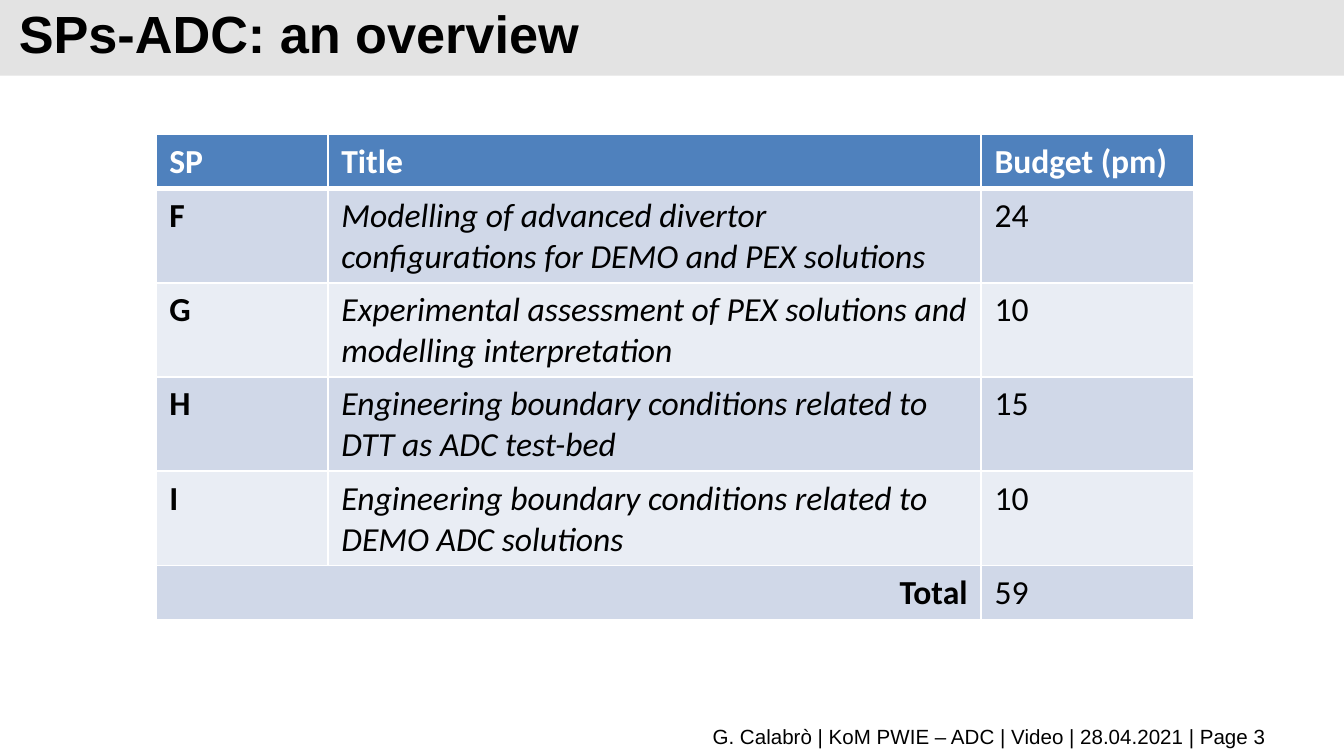
from typing import NamedTuple

from lxml.etree import SubElement
from pptx import Presentation
from pptx.dml.color import RGBColor
from pptx.enum.shapes import MSO_SHAPE as Shape
from pptx.enum.text import MSO_ANCHOR as Anchor, PP_ALIGN as Align
from pptx.oxml.ns import qn
from pptx.util import Pt

BLACK, WHITE, BAND = "000000", "FFFFFF", "E3E3E3"
HEADER, STRIPES = "4F81BD", ("D0D8E8", "E9EDF4")
ROW_HEIGHT = 29.2
COLUMN_WIDTHS = (92.2, 349.9, 113.8)


class Box(NamedTuple):
    left: float
    top: float
    width: float
    height: float

    def points(self) -> list:
        return [Pt(v) for v in self]


class Project(NamedTuple):
    code: str
    title: str
    budget: int


PROJECTS = [
    Project("F", "Modelling of advanced divertor configurations for DEMO and PEX solutions", 24),
    Project("G", "Experimental assessment of PEX solutions and modelling interpretation", 10),
    Project("H", "Engineering boundary conditions related to DTT as ADC test-bed", 15),
    Project("I", "Engineering boundary conditions related to DEMO ADC solutions", 10),
]


def rgb(color: str) -> RGBColor:
    return RGBColor.from_string(color)


def style(p, size: float, font: str, color: str = BLACK, bold=False, italic=False, align=Align.LEFT) -> None:
    p.alignment = align
    p.font.size, p.font.name = Pt(size), font
    p.font.bold, p.font.italic = bold, italic
    p.font.color.rgb = rgb(color)


def set_borders(cell, top: float, bottom: float) -> None:
    tc_pr = cell._tc.get_or_add_tcPr()
    widths = {"a:lnL": 1, "a:lnR": 1, "a:lnT": top, "a:lnB": bottom}
    for i, (tag, width) in enumerate(widths.items()):
        line = SubElement(tc_pr, qn(tag), w=str(Pt(width)))
        fill = SubElement(line, qn("a:solidFill"))
        SubElement(fill, qn("a:srgbClr"), val=WHITE)
        tc_pr.insert(i, line)


def fill_cell(cell, text: str, fill: str, **font) -> None:
    cell.text = text
    cell.fill.solid()
    cell.fill.fore_color.rgb = rgb(fill)
    style(cell.text_frame.paragraphs[0], 18, "Calibri", **font)


def add_title(s, text: str) -> None:
    # Grey band behind the title
    band = s.shapes.add_shape(Shape.RECTANGLE, *Box(0, 0, 720, 40.5).points())
    band.shadow.inherit = False
    band.fill.solid()
    band.fill.fore_color.rgb = rgb(BAND)
    band.line.fill.background()
    title = s.shapes.title
    title._element.addprevious(band._element)

    title.left, title.top, title.width, title.height = Box(2.9, 4.3, 669, 27.4).points()
    tf = title.text_frame
    tf.text, tf.vertical_anchor = text, Anchor.MIDDLE
    p = tf.paragraphs[0]
    p.line_spacing = Pt(32)
    style(p, 28, "Arial", bold=True)


def add_footer(s, text: str) -> None:
    tf = s.shapes.add_textbox(*Box(36.7, 386.6, 648.7, 15.8).points()).text_frame
    tf.word_wrap, tf.vertical_anchor = True, Anchor.MIDDLE
    tf.text = text
    style(tf.paragraphs[0], 11, "Arial", align=Align.RIGHT)


def add_budget_table(s, projects: list[Project]) -> None:
    last = len(projects) + 1
    box = Box(83.5, 72, sum(COLUMN_WIDTHS), 260)
    frame = s.shapes.add_table(last + 1, len(COLUMN_WIDTHS), *box.points())
    table = frame.table
    table.horz_banding = False
    for column, width in zip(table.columns, COLUMN_WIDTHS):
        column.width = Pt(width)
    for row in table.rows:
        row.height = Pt(ROW_HEIGHT)
    frame.height = Pt(box.height)

    # Header row
    for c, text in enumerate(("SP", "Title", "Budget (pm)")):
        fill_cell(table.cell(0, c), text, HEADER, color=WHITE, bold=True)

    # One row per project
    for r, project in enumerate(projects, 1):
        fill = STRIPES[(r - 1) % 2]
        fill_cell(table.cell(r, 0), project.code, fill, bold=True)
        fill_cell(table.cell(r, 1), project.title, fill, italic=True)
        fill_cell(table.cell(r, 2), str(project.budget), fill)

    # Total row
    fill = STRIPES[(last - 1) % 2]
    table.cell(last, 0).merge(table.cell(last, 1))
    fill_cell(table.cell(last, 0), "Total", fill, bold=True, align=Align.RIGHT)
    fill_cell(table.cell(last, 2), str(sum(p.budget for p in projects)), fill)

    # White rules, thicker under the header
    for r, row in enumerate(table.rows):
        for cell in row.cells:
            set_borders(cell, top=3 if r == 1 else 1, bottom=3 if r == 0 else 1)


def main() -> None:
    prs = Presentation()
    prs.slide_width, prs.slide_height = Pt(720), Pt(405)
    s = prs.slides.add_slide(prs.slide_layouts[5])
    add_title(s, "SPs-ADC: an overview")
    add_footer(s, "G. Calabrò | KoM PWIE – ADC | Video | 28.04.2021 | Page 3")
    add_budget_table(s, PROJECTS)
    prs.save("out.pptx")


if __name__ == "__main__":
    main()
